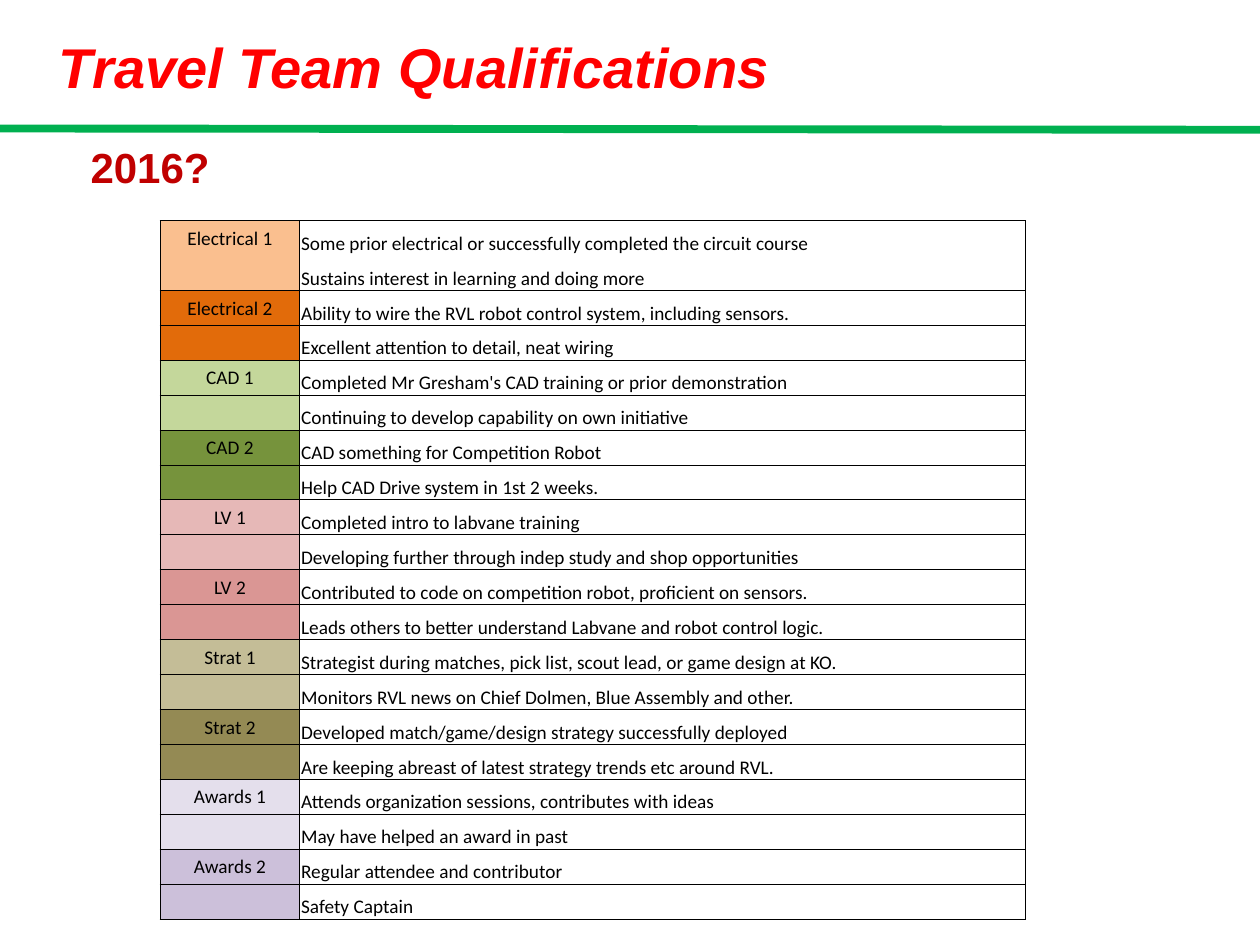
import pptx
import pptx.dml.color
import pptx.enum.shapes
import pptx.enum.text
import pptx.oxml
import pptx.oxml.ns
import pptx.util

ANCHOR = pptx.enum.text.MSO_ANCHOR
ALIGN = pptx.enum.text.PP_ALIGN


def color(hex_string):
    return pptx.dml.color.RGBColor.from_string(hex_string)


def write(frame, text, size=11, font="Calibri", fill="000000", bold=False,
          italic=False, align=ALIGN.LEFT):
    paragraph = frame.paragraphs[0]
    paragraph.alignment = align
    if not text:
        # An empty cell still needs a small font, or its row grows
        end = paragraph._p.get_or_add_endParaRPr()
        end.set("sz", str(size * 100))
        return
    run = paragraph.add_run()
    run.text = text
    run.font.size = pptx.util.Pt(size)
    run.font.name = font
    run.font.color.rgb = color(fill)
    run.font.bold = bold
    run.font.italic = italic


# Slide on a grid of 100 columns by 75 rows
presentation = pptx.Presentation()
presentation.slide_width = pptx.util.Inches(10)
presentation.slide_height = pptx.util.Inches(7.5)
slide = presentation.slides.add_slide(presentation.slide_layouts[6])
column = presentation.slide_width / 100
row = presentation.slide_height / 75

# Green rule under the title
rule = slide.shapes.add_connector(
    pptx.enum.shapes.MSO_CONNECTOR.STRAIGHT,
    0, int(10.2 * row), int(100 * column), int(10.3 * row))
rule.line.color.rgb = color("00B050")
rule.line.width = pptx.util.Pt(4.5)
rule._element.spPr.append(pptx.oxml.parse_xml(
    f'<a:effectLst {pptx.oxml.ns.nsdecls("a")}/>'))

# Title and subtitle
headings = [
    ("Travel Team Qualifications", (3.7, 2.1, 60, 6.4), ANCHOR.TOP,
     dict(size=32, fill="FF0000", italic=True)),
    ("2016?", (6.2, 10.6, 80.9, 5.3), ANCHOR.MIDDLE,
     dict(size=24, fill="C00000")),
]
for text, (left, top, width, height), anchor, style in headings:
    box = slide.shapes.add_textbox(int(left * column), int(top * row),
                                   int(width * column), int(height * row))
    box.text_frame.word_wrap = True
    box.text_frame.vertical_anchor = anchor
    write(box.text_frame, text, font="Arial", bold=True, **style)

# Qualifications: level, colour and two requirements each
qualifications = [
    ("Electrical 1", "FABF8F",
     "Some prior electrical or successfully completed the circuit course",
     "Sustains interest in learning and doing more"),
    ("Electrical 2", "E26B0A",
     "Ability to wire the RVL robot control system, including sensors.",
     "Excellent attention to detail, neat wiring"),
    ("CAD 1", "C4D79B",
     "Completed Mr Gresham's CAD training or prior demonstration",
     "Continuing to develop capability on own initiative"),
    ("CAD 2", "76933C",
     "CAD something for Competition Robot",
     "Help CAD Drive system in 1st 2 weeks."),
    ("LV 1", "E6B8B7",
     "Completed intro to labvane training",
     "Developing further through indep study and shop opportunities"),
    ("LV 2", "DA9694",
     "Contributed to code on competition robot, proficient on sensors.",
     "Leads others to better understand Labvane and robot control logic."),
    ("Strat 1", "C4BD97",
     "Strategist during matches, pick list, scout lead, or game design at KO.",
     "Monitors RVL news on Chief Dolmen, Blue Assembly and other."),
    ("Strat 2", "948A54",
     "Developed match/game/design strategy successfully deployed",
     "Are keeping abreast of latest strategy trends etc around RVL."),
    ("Awards 1", "E4DFEC",
     "Attends organization sessions, contributes with ideas",
     "May have helped an award in past"),
    ("Awards 2", "CCC0DA",
     "Regular attendee and contributor",
     "Safety Captain"),
]

# Table: two rows per level, unstyled
row_count = 2 * len(qualifications)
table = slide.shapes.add_table(
    row_count, 2, int(12.7 * column), int(17.5 * row),
    int(68.7 * column), int(55.5 * row)).table
table.first_row = False
table.horz_banding = False
table._tbl.tblPr.find(pptx.oxml.ns.qn("a:tableStyleId")).text = (
    "{2D5ABB26-0587-4C30-8999-92F81FD0307C}")
for table_column, width in zip(table.columns, (11.1, 57.6)):
    table_column.width = int(width * column)
for table_row in table.rows:
    table_row.height = int(55.5 * row / row_count)

# Cells: each pair of rows is framed as one block
for index, (level, level_fill, first, second) in enumerate(qualifications):
    pair = [(level, first, "lnT"), ("", second, "lnB")]
    for offset, (label, requirement, edge) in enumerate(pair):
        label_cell, requirement_cell = table.rows[2 * index + offset].cells
        for cell in (label_cell, requirement_cell):
            cell.margin_left = cell.margin_right = pptx.util.Inches(0.01)
            cell.margin_top = pptx.util.Inches(0.01)
            cell.margin_bottom = 0
            for side in ("lnL", "lnR", edge):
                cell._tc.get_or_add_tcPr().append(pptx.oxml.parse_xml(
                    f'<a:{side} {pptx.oxml.ns.nsdecls("a")} w="6350">'
                    '<a:solidFill><a:srgbClr val="000000"/></a:solidFill>'
                    f'</a:{side}>'))
        label_cell.fill.solid()
        label_cell.fill.fore_color.rgb = color(level_fill)
        label_cell.vertical_anchor = ANCHOR.MIDDLE
        write(label_cell.text_frame, label, align=ALIGN.CENTER)
        requirement_cell.fill.background()
        requirement_cell.vertical_anchor = ANCHOR.BOTTOM
        write(requirement_cell.text_frame, requirement)

presentation.save("out.pptx")
